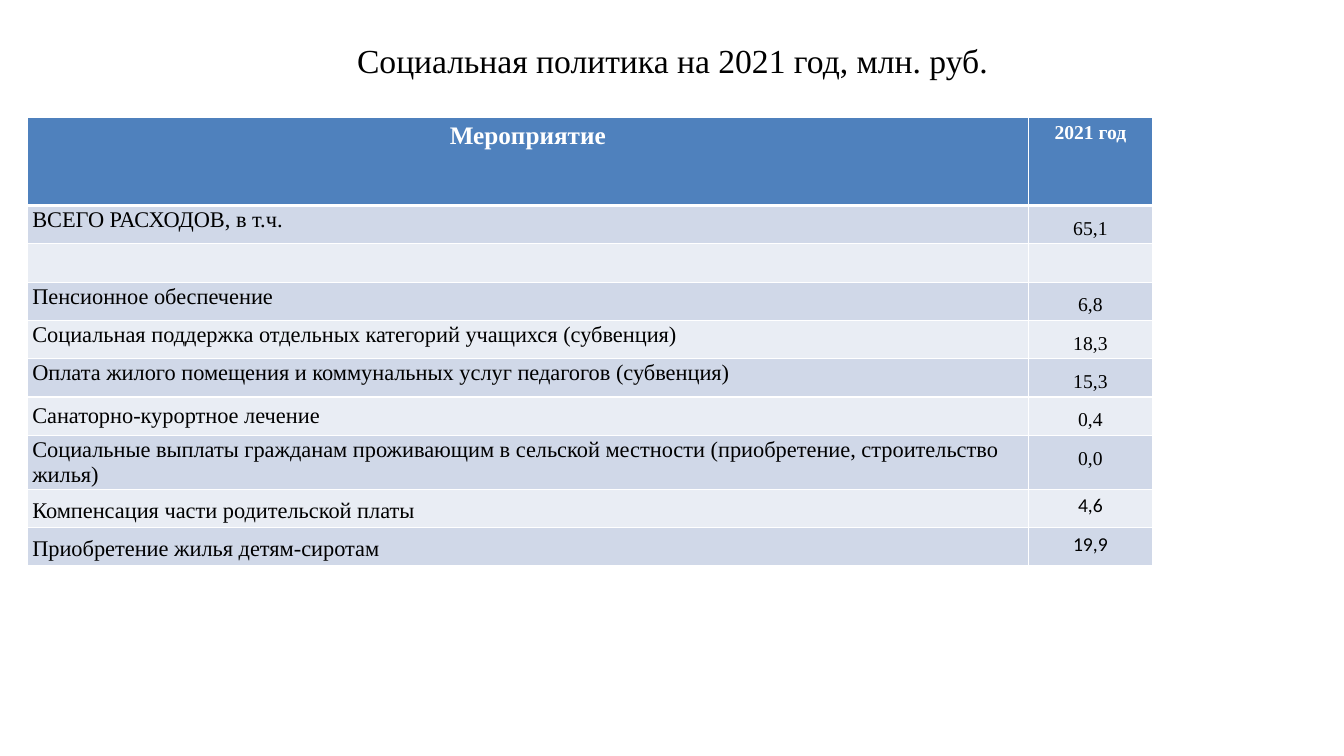
from dataclasses import dataclass
from typing import Optional

from lxml.etree import SubElement
from pptx import Presentation
from pptx.dml.color import RGBColor
from pptx.enum.text import MSO_ANCHOR, PP_ALIGN
from pptx.oxml.ns import qn
from pptx.util import Inches, Pt

HUES = {"head": "4F81BD", "odd": "D0D8E8", "even": "E9EDF4",
        "white": "FFFFFF", "black": "000000"}
SERIF = "Times New Roman"


@dataclass
class Item:
    name: str = ""
    value: str = ""
    lead: Optional[int] = None  # line pitch of the name, in points
    low: bool = False  # name sits one line below the cell top
    font: str = SERIF  # font of the value


ITEMS = [
    Item("ВСЕГО РАСХОДОВ, в т.ч.", "65,1", 11),
    Item(),
    Item("Пенсионное обеспечение", "6,8", 11),
    Item("Социальная поддержка отдельных категорий учащихся (субвенция)", "18,3", 11),
    Item("Оплата жилого помещения и коммунальных услуг педагогов (субвенция)", "15,3", 11),
    Item("Санаторно-курортное лечение", "0,4"),
    Item("Социальные выплаты гражданам проживающим в сельской местности "
         "(приобретение, строительство жилья)", "0,0"),
    Item("Компенсация части родительской платы", "4,6", 12, True, "Calibri"),
    Item("Приобретение жилья детям-сиротам", "19,9", 12, True, "Calibri"),
]


def write(frame, text: str, *, size: int, font: str = SERIF, hue: str = "black",
          bold: bool = False, center: bool = True, lead: Optional[int] = None) -> None:
    para = frame.paragraphs[0]
    para.alignment = PP_ALIGN.CENTER if center else PP_ALIGN.LEFT
    if lead:
        para.line_spacing = Pt(lead)
    run = para.add_run()
    run.text = text
    run.font.size, run.font.name, run.font.bold = Pt(size), font, bold
    run.font.color.rgb = RGBColor.from_string(HUES[hue])


def pad(cell, side: float, top: float, base: float) -> None:
    cell.margin_left = cell.margin_right = Inches(side)
    cell.margin_top, cell.margin_bottom = Inches(top), Inches(base)


def paint(cell, hue: str, top: int = 1, base: int = 1) -> None:
    """Fill a cell and give it white borders, with widths in points."""
    props = cell._tc.get_or_add_tcPr()
    for tag, width in (("lnL", 1), ("lnR", 1), ("lnT", top), ("lnB", base)):
        line = SubElement(props, qn(f"a:{tag}"), w=str(Pt(width)))
        fill = SubElement(line, qn("a:solidFill"))
        SubElement(fill, qn("a:srgbClr"), val=HUES["white"])
    cell.fill.solid()
    cell.fill.fore_color.rgb = RGBColor.from_string(HUES[hue])


def fill_row(table, row: int, item: Item) -> None:
    name, value = table.cell(row, 0), table.cell(row, 1)
    for cell in (name, value):
        paint(cell, "odd" if row % 2 else "even", top=3 if row == 1 else 1)
        pad(cell, 0.05, 0, 0)
    if not item.name:
        return
    if item.low:
        pad(name, 0.05, 0.17, 0)
        pad(value, 0.1, 0.05, 0.05)
    else:
        name.vertical_anchor = MSO_ANCHOR.MIDDLE
        pad(value, 0.05, 0.17, 0)
    write(name.text_frame, item.name, size=16, center=False, lead=item.lead)
    write(value.text_frame, item.value, size=14, font=item.font,
          lead=None if item.low else 12)


def add_costs(slide) -> None:
    table = slide.shapes.add_table(len(ITEMS) + 1, 2, Inches(0.27), Inches(1.16),
                                   Inches(11.16), Inches(4.3)).table
    for col, width in zip(table.columns, (9.93, 1.23)):
        col.width = Inches(width)
    for row, line in enumerate(table.rows):
        line.height = Inches(0.38 if row else 0.88)
    for col, (text, size) in enumerate((("Мероприятие", 18), ("2021 год", 14))):
        cell = table.cell(0, col)
        paint(cell, "head", base=3)
        write(cell.text_frame, text, size=size, hue="white", bold=True)
    for row, item in enumerate(ITEMS, 1):
        fill_row(table, row, item)


def main() -> None:
    deck = Presentation()
    deck.slide_width, deck.slide_height = Inches(13.33), Inches(7.5)
    slide = deck.slides.add_slide(deck.slide_layouts[6])
    title = slide.shapes.add_textbox(Inches(0.67), Inches(0.3), Inches(12), Inches(0.6))
    title.text_frame.word_wrap = True
    title.text_frame.vertical_anchor = MSO_ANCHOR.MIDDLE
    write(title.text_frame, "Социальная политика на 2021 год, млн. руб.", size=24)
    add_costs(slide)
    deck.save("out.pptx")


if __name__ == "__main__":
    main()
